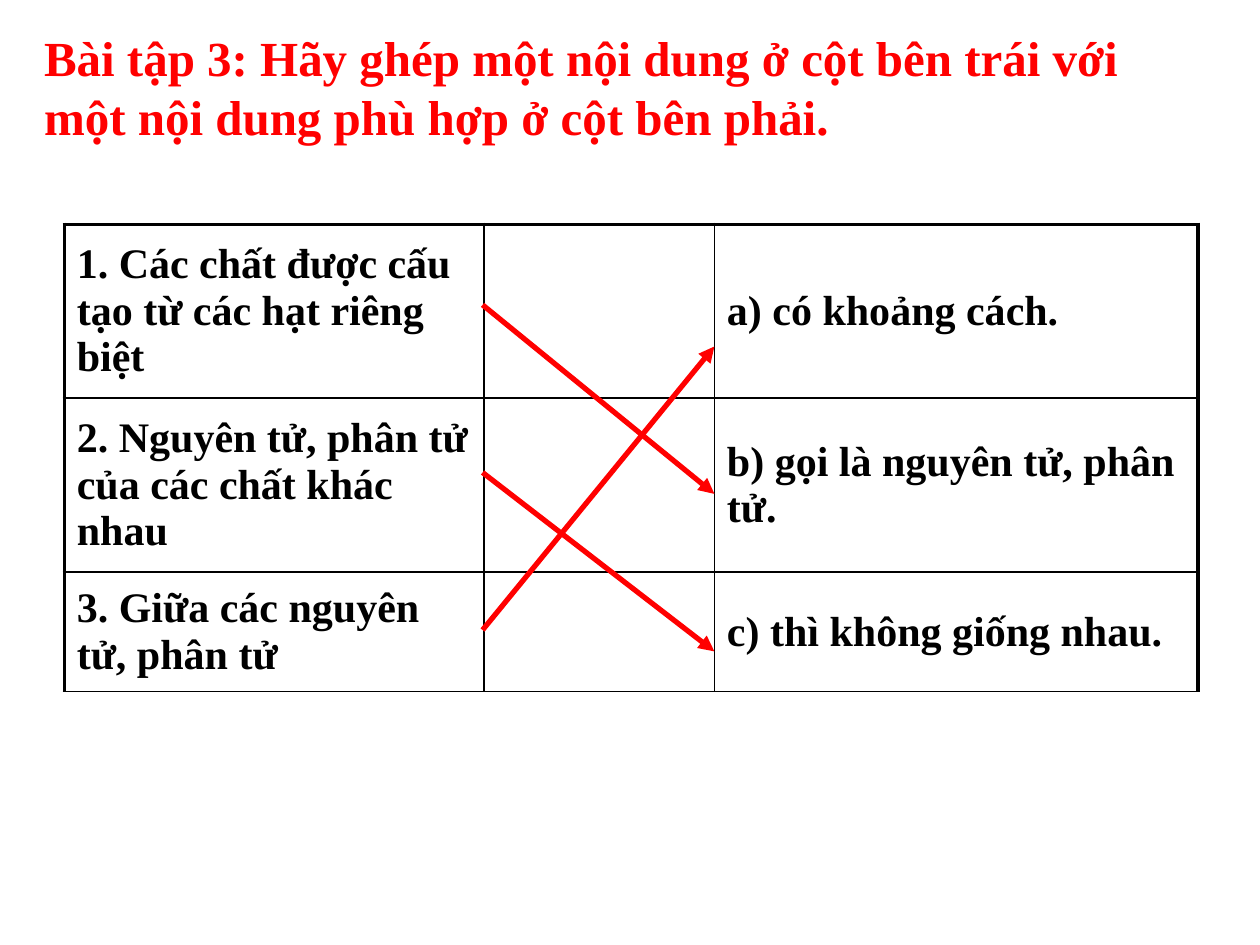
from dataclasses import dataclass

from lxml.etree import SubElement
from pptx import Presentation
from pptx.dml.color import RGBColor
from pptx.enum.shapes import MSO_CONNECTOR
from pptx.enum.text import MSO_ANCHOR, MSO_AUTO_SIZE, PP_ALIGN
from pptx.oxml.ns import qn
from pptx.util import Inches, Pt


@dataclass(frozen=True)
class Theme:
    """Colours, font and sizes of the slide."""
    font: str = "Times New Roman"
    accent: RGBColor = RGBColor(0xFF, 0x00, 0x00)
    ink: RGBColor = RGBColor(0x00, 0x00, 0x00)
    title_size: int = 28
    body_size: int = 24
    frame_width: float = 2.25
    grid_width: float = 1
    arrow_width: float = 3


THEME = Theme()
TITLE = "Bài tập 3: Hãy ghép một nội dung ở cột bên trái với một nội dung phù hợp ở cột bên phải."
ROWS = [
    ("1. Các chất được cấu tạo từ các hạt riêng biệt", "a) có khoảng cách."),
    ("2. Nguyên tử, phân tử của các chất khác nhau", "b) gọi là nguyên tử, phân tử."),
    ("3. Giữa các nguyên tử, phân tử", "c) thì không giống nhau."),
]
COLUMN_WIDTHS = [3.33, 1.83, 3.84]
ROW_HEIGHTS = [1.38, 1.38, 0.95]
MATCH_LEFT, MATCH_RIGHT = 3.83, 5.67
MATCHES = [(2.42, 3.92), (5, 2.75), (3.75, 5.17)]


def style_font(para, size, color):
    """Apply the bold theme font to a paragraph."""
    para.font.name = THEME.font
    para.font.size = Pt(size)
    para.font.bold = True
    para.font.color.rgb = color


def add_title(page):
    """Fill and place the title placeholder."""
    box = page.shapes.title
    box.left, box.top, box.width, box.height = map(Inches, (0.25, 0.17, 9.42, 1.03))
    frame = box.text_frame
    frame.text = TITLE
    frame.word_wrap = True
    frame.auto_size = MSO_AUTO_SIZE.SHAPE_TO_FIT_TEXT
    frame.vertical_anchor = MSO_ANCHOR.TOP
    para = frame.paragraphs[0]
    para.alignment = PP_ALIGN.LEFT
    style_font(para, THEME.title_size, THEME.accent)


def set_borders(cell, widths):
    """Draw the left, right, top and bottom borders of a cell."""
    properties = cell._tc.get_or_add_tcPr()
    for index, (side, width) in enumerate(zip("LRTB", widths)):
        line = properties.makeelement(qn(f"a:ln{side}"), {"w": str(Pt(width))})
        fill = SubElement(line, qn("a:solidFill"))
        SubElement(fill, qn("a:srgbClr"), val=str(THEME.ink))
        properties.insert(index, line)


def add_matching_table(page):
    """Add the two lists with an empty column between them."""
    size = sum(COLUMN_WIDTHS), sum(ROW_HEIGHTS)
    shape = page.shapes.add_table(
        len(ROW_HEIGHTS), len(COLUMN_WIDTHS), *map(Inches, (0.51, 1.78, *size)))
    table = shape.table
    table.first_row = table.horz_banding = False
    for column, width in zip(table.columns, COLUMN_WIDTHS):
        column.width = Inches(width)
    for row, height in zip(table.rows, ROW_HEIGHTS):
        row.height = Inches(height)
    last = len(COLUMN_WIDTHS) - 1
    for row_index, (left, right) in enumerate(ROWS):
        for column_index, text in enumerate((left, "", right)):
            cell = table.cell(row_index, column_index)
            cell.fill.background()
            cell.vertical_anchor = MSO_ANCHOR.MIDDLE
            cell.text = text
            style_font(cell.text_frame.paragraphs[0], THEME.body_size, THEME.ink)
            framed = (column_index == 0, column_index == last, row_index == 0, False)
            set_borders(cell, [THEME.frame_width if outer else THEME.grid_width
                               for outer in framed])


def add_match_arrow(page, start, end):
    """Add an arrow across the middle column between two heights."""
    arrow = page.shapes.add_connector(
        MSO_CONNECTOR.STRAIGHT, *map(Inches, (MATCH_LEFT, start, MATCH_RIGHT, end)))
    arrow.line.color.rgb = THEME.accent
    arrow.line.width = Pt(THEME.arrow_width)
    SubElement(arrow.line._get_or_add_ln(), qn("a:tailEnd"), type="triangle")
    SubElement(arrow._element.spPr, qn("a:effectLst"))


def main():
    """Build the matching exercise and save it."""
    deck = Presentation()
    deck.slide_width, deck.slide_height = Inches(10), Inches(7.5)
    page = deck.slides.add_slide(deck.slide_layouts.get_by_name("Title Only"))
    add_title(page)
    add_matching_table(page)
    for start, end in MATCHES:
        add_match_arrow(page, start, end)
    deck.save("out.pptx")


if __name__ == "__main__":
    main()
